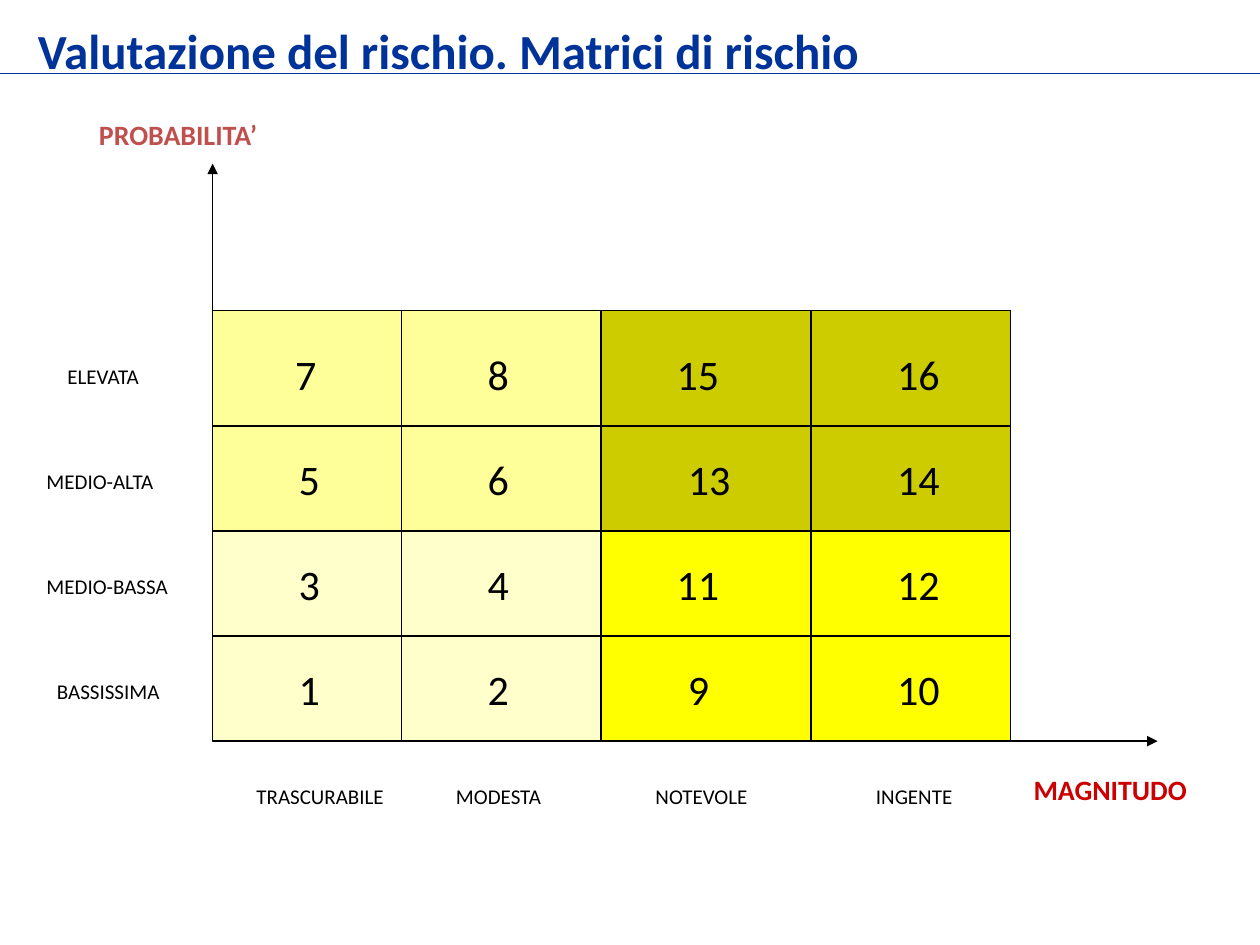
from typing import NamedTuple

from pptx import Presentation
from pptx.dml.color import RGBColor
from pptx.enum.shapes import MSO_CONNECTOR as Connector, MSO_SHAPE as Shape
from pptx.enum.text import MSO_ANCHOR as Anchor, MSO_AUTO_SIZE as AutoSize, PP_ALIGN as Align
from pptx.oxml.ns import qn
from pptx.util import Pt
from lxml.etree import SubElement

BLACK = "000000"
NAVY = "003399"
COLUMN_EDGES = (121.5, 229.5, 343.5, 463.5, 577.5)
ROW_EDGES = (177.5, 243.5, 303.5, 363.5, 423.5)
ROW_STEP = 60
LEFT, RIGHT = COLUMN_EDGES[0], COLUMN_EDGES[-1]
TOP, BOTTOM = ROW_EDGES[0], ROW_EDGES[-1]
MIDDLE_X, MIDDLE_Y = COLUMN_EDGES[2], ROW_EDGES[2]


class Zone(NamedTuple):
    left: float
    top: float
    right: float
    bottom: float
    color: str


class Rule(NamedTuple):
    x1: float
    y1: float
    x2: float
    y2: float
    color: str = BLACK
    weight: float = 0.75
    arrow: bool = False


class Label(NamedTuple):
    text: str
    left: float
    top: float
    width: float
    height: float
    size: float
    color: str = BLACK
    bold: bool = False


def rgb(color: str) -> RGBColor:
    return RGBColor.from_string(color)


def apply_format(target, values: dict) -> None:
    for name, value in values.items():
        setattr(target, name, value)


def draw_zone(slide, zone: Zone):
    area = slide.shapes.add_shape(
        Shape.RECTANGLE, Pt(zone.left), Pt(zone.top),
        Pt(zone.right - zone.left), Pt(zone.bottom - zone.top))
    area.shadow.inherit = False
    area.fill.solid()
    area.fill.fore_color.rgb = rgb(zone.color)
    area.line.color.rgb = rgb(BLACK)
    area.line.width = Pt(0.75)
    return area


def draw_rule(slide, rule: Rule):
    connector = slide.shapes.add_connector(
        Connector.STRAIGHT, Pt(rule.x1), Pt(rule.y1), Pt(rule.x2), Pt(rule.y2))
    connector.line.color.rgb = rgb(rule.color)
    connector.line.width = Pt(rule.weight)
    if rule.arrow:
        SubElement(connector.line._get_or_add_ln(), qn("a:tailEnd"), type="triangle")
    SubElement(connector._element.spPr, qn("a:effectLst"))
    return connector


def write_label(holder, label: Label) -> None:
    apply_format(holder, {
        "left": Pt(label.left), "top": Pt(label.top),
        "width": Pt(label.width), "height": Pt(label.height)})
    frame = holder.text_frame
    frame.text = label.text
    apply_format(frame, {
        "word_wrap": True, "auto_size": AutoSize.SHAPE_TO_FIT_TEXT,
        "vertical_anchor": Anchor.TOP})
    paragraph = frame.paragraphs[0]
    paragraph.alignment = Align.LEFT
    font = paragraph.runs[0].font
    apply_format(font, {"name": "Calibri", "size": Pt(label.size), "bold": label.bold})
    font.color.rgb = rgb(label.color)


def main() -> None:
    deck = Presentation()
    apply_format(deck, {"slide_width": Pt(720), "slide_height": Pt(540)})
    slide = deck.slides.add_slide(deck.slide_layouts[5])

    write_label(slide.shapes.title, Label(
        "Valutazione del rischio. Matrici di rischio", 14.5, 8, 518, 41, 28, NAVY, True))
    draw_rule(slide, Rule(0, 42, 720, 42, NAVY, 1))

    draw_zone(slide, Zone(MIDDLE_X, TOP, RIGHT, MIDDLE_Y, "CCCC00"))
    draw_zone(slide, Zone(LEFT, TOP, MIDDLE_X, MIDDLE_Y, "FFFF99"))
    lower_right = draw_zone(slide, Zone(MIDDLE_X, MIDDLE_Y, RIGHT, BOTTOM, "FFFF00"))
    lower_left = draw_zone(slide, Zone(LEFT, MIDDLE_Y, MIDDLE_X, BOTTOM, "FFFFCC"))

    draw_rule(slide, Rule(LEFT, BOTTOM, 661.5, BOTTOM, arrow=True))
    draw_rule(slide, Rule(LEFT, BOTTOM, LEFT, 93.5, arrow=True))
    row_rules = [draw_rule(slide, Rule(LEFT, y, RIGHT, y)) for y in ROW_EDGES[:-1]]
    row_rules[3].begin_connect(lower_left, 1)
    row_rules[3].end_connect(lower_right, 3)
    for x in COLUMN_EDGES[1:]:
        draw_rule(slide, Rule(x, TOP, x, BOTTOM))

    scores = (
        (("7", 161.5), ("8", 271.5), ("15", 379.5), ("16", 505.5)),
        (("5", 163.5), ("6", 271.5), ("13", 386), ("14", 505.5)),
        (("3", 163.5), ("4", 271.5), ("11", 379.5), ("12", 505.5)),
        (("1", 163.5), ("2", 271.5), ("9", 386), ("10", 505.5)),
    )
    probabilities = (
        ("ELEVATA", 31.5), ("MEDIO-ALTA", 19.5),
        ("MEDIO-BASSA", 19.5), ("BASSISSIMA", 25.5))
    magnitudes = (
        ("TRASCURABILE", 139.5), ("MODESTA", 253.5),
        ("NOTEVOLE", 367.5), ("INGENTE", 493.5))

    labels = [
        Label(score, left, 195.5 + row * ROW_STEP, 54, 36, 24)
        for row, row_scores in enumerate(scores) for score, left in row_scores]
    labels += [
        Label(name, left, 204 + row * ROW_STEP, 102, 21.6, 12)
        for row, (name, left) in enumerate(probabilities)]
    labels += [Label(name, left, 444, 114, 21.6, 12) for name, left in magnitudes]
    labels += [
        Label("MAGNITUDO", 583.5, 438, 126, 26.6, 16, "CC0000", True),
        Label("PROBABILITA’", 49.5, 63.5, 150, 26.6, 16, "C0504D", True)]
    for label in labels:
        write_label(slide.shapes.add_textbox(0, 0, 0, 0), label)

    deck.save("out.pptx")


if __name__ == "__main__":
    main()
